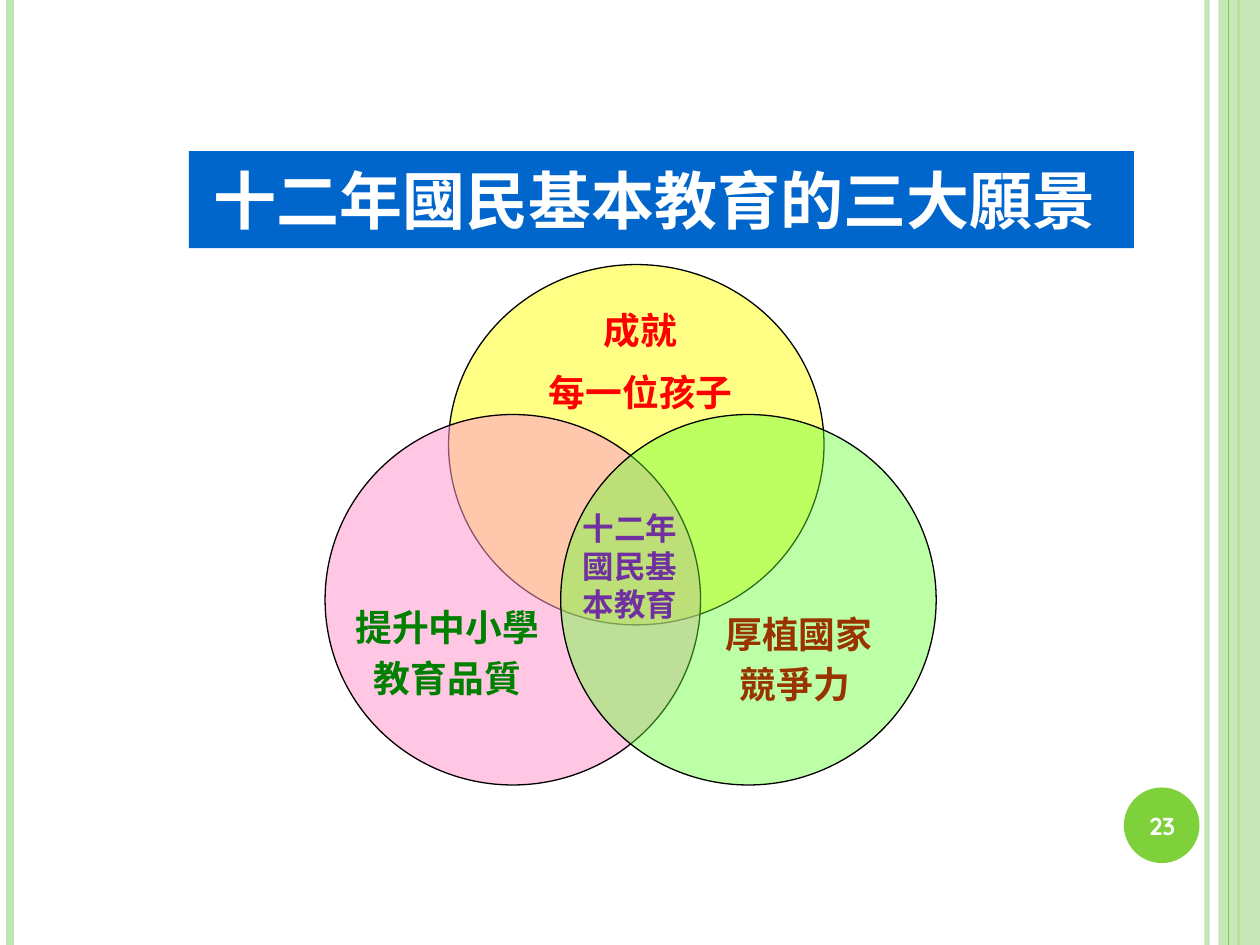
from dataclasses import dataclass

from lxml.etree import SubElement
from pptx import Presentation
from pptx.dml.color import RGBColor
from pptx.enum.shapes import MSO_CONNECTOR as Connector, MSO_SHAPE as Preset
from pptx.enum.text import MSO_ANCHOR as Anchor, PP_ALIGN as Align
from pptx.oxml.ns import qn
from pptx.util import Inches, Pt


@dataclass(frozen=True)
class Theme:
    font: str = "Noto Sans CJK SC"
    number_font: str = "Quicksand"
    title_size: int = 36
    title_space_size: int = 33
    label_size: int = 21
    center_size: int = 18
    number_size: int = 14
    line_height: float = 1.2
    accent: str = "7FD13B"
    pale: str = "C0E5AF"
    banner: str = "0066CC"
    white: str = "FFFFFF"
    number: str = "FEFFFF"
    outline: str = "000000"
    yellow: str = "FFFF00"
    pink: str = "FF99CC"
    green: str = "66FF33"
    red_text: str = "FF0000"
    green_text: str = "008000"
    brown_text: str = "993300"
    purple_text: str = "7030A0"


THEME = Theme()


def rgb(value):
    return RGBColor.from_string(value)


def set_alpha(element, percent):
    color = next(element.iter(qn("a:srgbClr")))
    SubElement(color, qn("a:alpha"), val=str(percent * 1000))


def add_filled(slide, preset, box, fill, alpha=100, outline=None):
    shape = slide.shapes.add_shape(preset, *map(Inches, box))
    shape.shadow.inherit = False
    shape.fill.solid()
    shape.fill.fore_color.rgb = rgb(fill)
    if alpha < 100:
        set_alpha(shape.fill._xPr, alpha)
    if outline:
        shape.line.color.rgb = rgb(outline)
        shape.line.width = Pt(0.75)
    else:
        shape.line.fill.background()
    return shape


def add_rule(slide, x, top, height, color, width, alpha=100):
    ends = map(Inches, (x, top, x, top + height))
    rule = slide.shapes.add_connector(Connector.STRAIGHT, *ends)
    rule.line.color.rgb = rgb(color)
    rule.line.width = Pt(width)
    if alpha < 100:
        set_alpha(rule.line._ln, alpha)
    SubElement(rule._element.spPr, qn("a:effectLst"))


def style_font(font, name, size, color):
    font.name, font.size, font.bold = name, Pt(size), True
    font.color.rgb = rgb(color)
    latin = font._element.find(qn("a:latin"))
    latin.addnext(latin.makeelement(qn("a:ea"), {"typeface": name}))


def add_label(slide, box, lines, size, color, gap=0, font=THEME.font,
              anchor=Anchor.TOP, line_height=THEME.line_height):
    frame = slide.shapes.add_textbox(*map(Inches, box)).text_frame
    frame.word_wrap = True
    frame.vertical_anchor = anchor
    for index, line in enumerate(lines):
        paragraph = frame.add_paragraph() if index else frame.paragraphs[0]
        paragraph.text = line
        paragraph.alignment = Align.CENTER
        paragraph.line_spacing = Pt(size * line_height)
        if index:
            paragraph.space_before = Pt(size * gap)
        style_font(paragraph.font, font, size, color)


def add_frame(slide, left, top, width, height):
    """Vertical stripes along both edges."""
    right = left + width
    add_rule(slide, right - 0.42, top, height, THEME.pale, 3, 93)
    add_rule(slide, left + 0.08, top, height, THEME.pale, 4.5)
    add_rule(slide, right - 0.17, top, height, THEME.accent, 1.5)
    add_filled(slide, Preset.RECTANGLE, (right - 0.33, top, 0.33, height),
               THEME.pale, 87)
    add_rule(slide, right - 0.25, top, height, THEME.accent, 0.75)


def add_page_number(slide, left, top, size, number):
    add_filled(slide, Preset.OVAL, (left, top, size, size), THEME.accent)
    add_label(slide, (left - 0.03, top + 0.02, size + 0.07, size - 0.03),
              [number], THEME.number_size, THEME.number,
              font=THEME.number_font, anchor=Anchor.MIDDLE)


def add_venn(slide, left, top):
    """Three overlapping circles, then their labels, from the top left."""
    circles = [
        (0.98, 0, 2.86, THEME.yellow, 48),
        (0, 1.19, 2.94, THEME.pink, 54),
        (1.87, 1.19, 2.94, THEME.green, 43),
    ]
    for x, y, height, color, alpha in circles:
        add_filled(slide, Preset.OVAL, (left + x, top + y, 2.98, height),
                   color, alpha, THEME.outline)

    size = THEME.label_size
    labels = [
        ((0, 2.65, 1.94, 0.88), ["提升中小學", "教育品質"],
         size, THEME.green_text, 0.2),
        ((1.65, 0.29, 1.71, 0.98), ["成就", "每一位孩子 "],
         size, THEME.red_text, 0.5),
        ((3.01, 2.71, 1.5, 0.86), ["厚植國家", "競爭力 "],
         size, THEME.brown_text, 0.15),
        ((1.89, 1.89, 1.06, 1.01), ["十二年國民基本教育"],
         THEME.center_size, THEME.purple_text, 0),
    ]
    for (x, y, width, height), *text in labels:
        add_label(slide, (left + x, top + y, width, height), *text)


def add_title(slide, left, top, width, height):
    banner = add_filled(slide, Preset.RECTANGLE, (left, top, width, height),
                        THEME.banner)
    frame = banner.text_frame
    frame.word_wrap = True
    frame.vertical_anchor = Anchor.MIDDLE
    paragraph = frame.paragraphs[0]
    paragraph.alignment = Align.CENTER
    for text, size in (("十二年國民基本教育的三大願景", THEME.title_size),
                       (" ", THEME.title_space_size)):
        run = paragraph.add_run()
        run.text = text
        style_font(run.font, THEME.font, size, THEME.white)


def main():
    presentation = Presentation()
    presentation.slide_width, presentation.slide_height = Inches(10), Inches(7.5)
    slide = presentation.slides.add_slide(presentation.slide_layouts[6])
    add_frame(slide, 0, 0, 10, 7.5)
    add_venn(slide, 2.58, 2.1)
    add_title(slide, 1.5, 1.2, 7.5, 0.77)
    add_page_number(slide, 8.92, 6.25, 0.6, "23")
    presentation.save("out.pptx")


if __name__ == "__main__":
    main()
